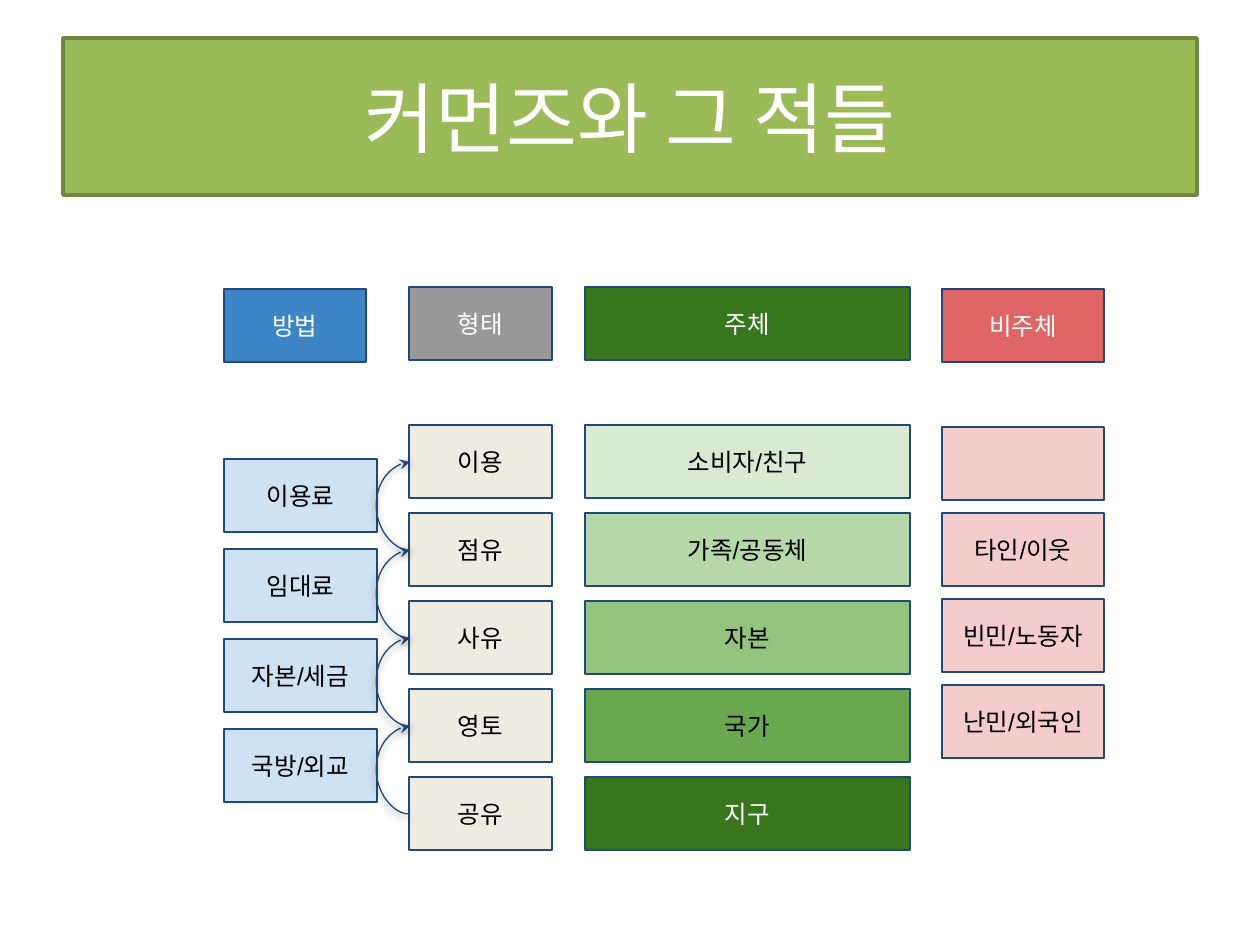
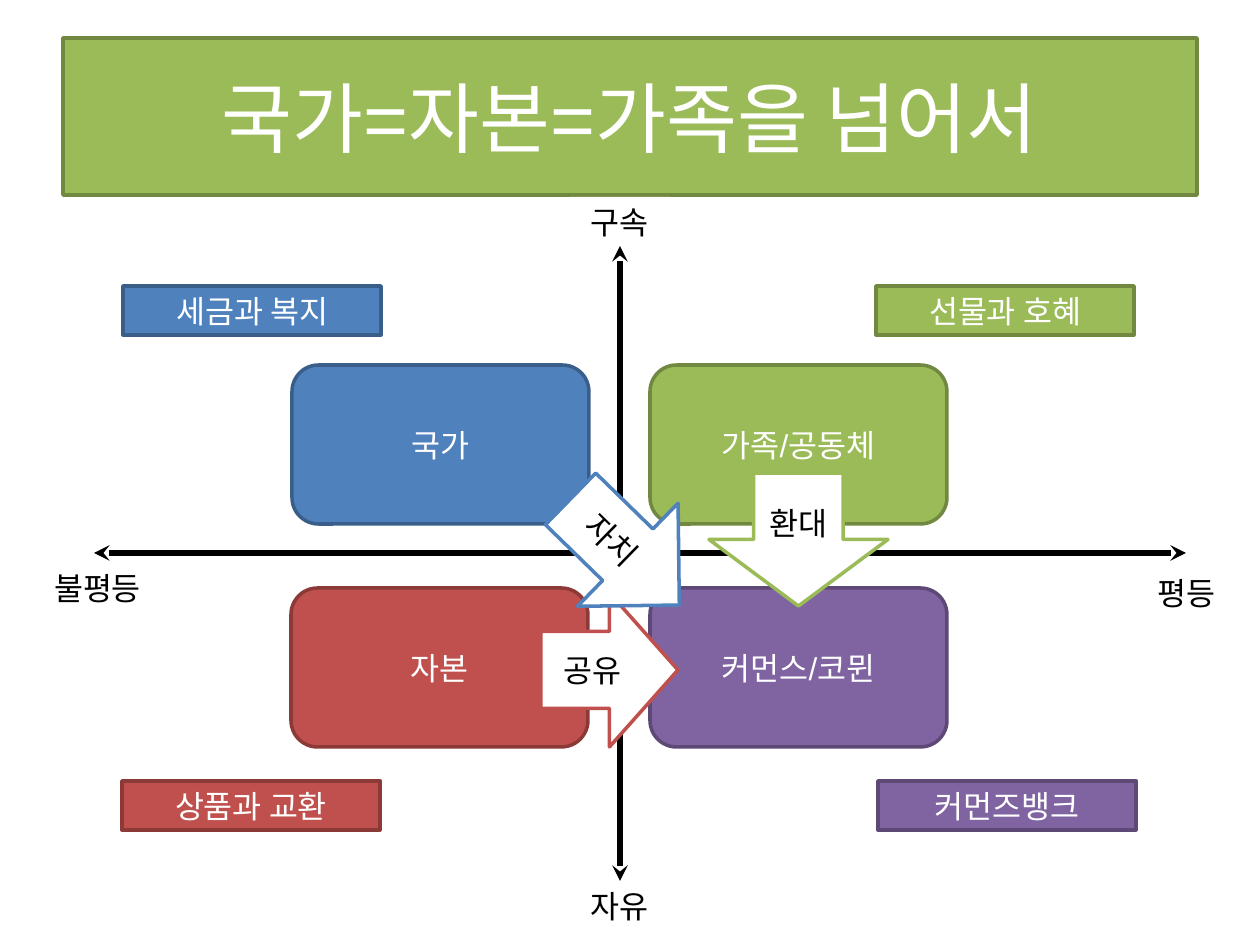
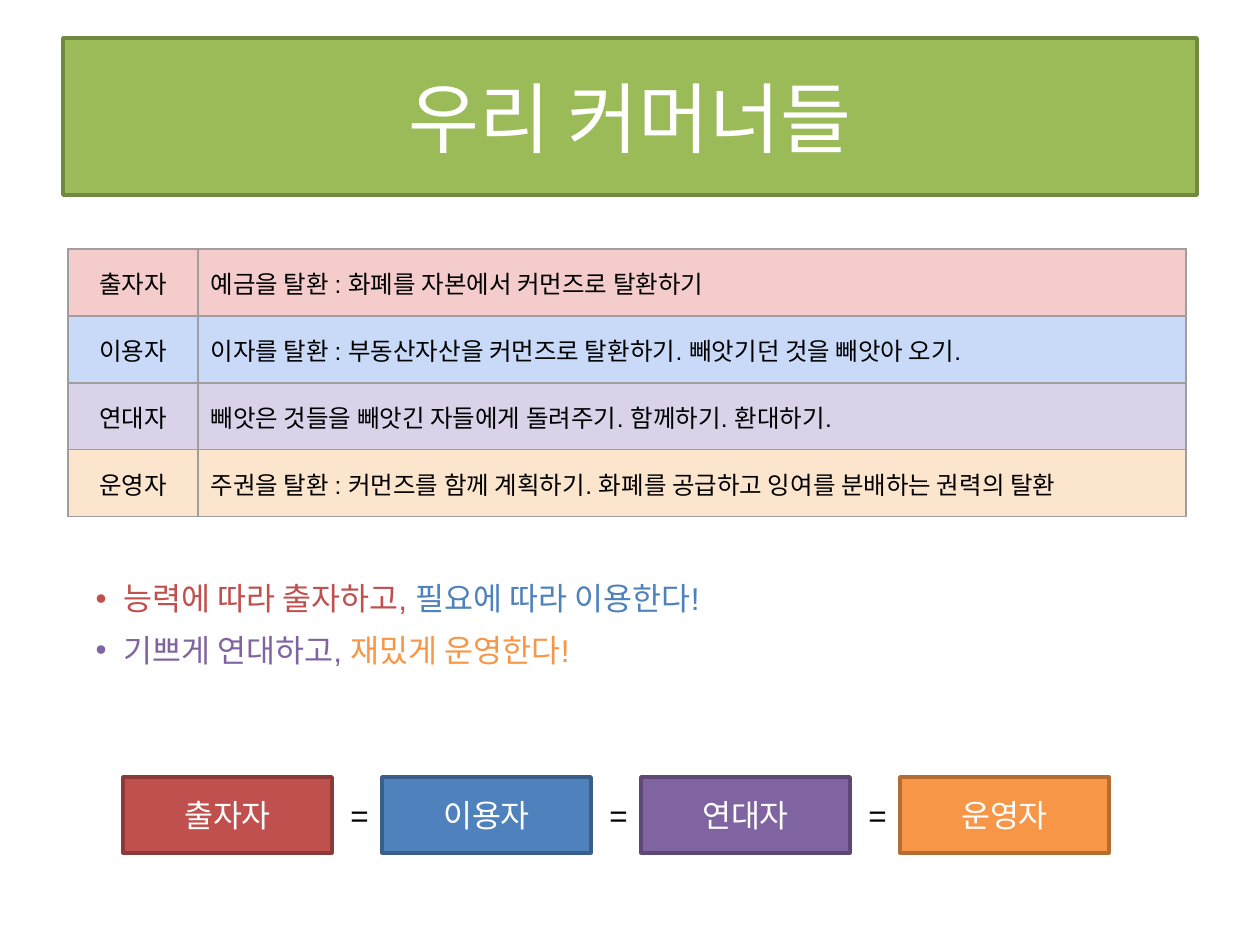
"""Builds three slides about the commons: forms of ownership, four quadrants, members."""
from lxml import etree
from pptx import Presentation
from pptx import util as u
from pptx.dml import color
from pptx.enum import shapes, text
from pptx.oxml import ns

PX = u.Inches(1) / 126
SHAPE = shapes.MSO_SHAPE
C = {
    "white": "FFFFFF", "black": "000000", "navy": "1F497D", "grid": "9E9E9E",
    "green": "9BBB59", "green_edge": "718840", "blue": "4F81BD", "blue_edge": "395E89",
    "red": "C0504D", "red_edge": "8C3A38", "purple": "8064A2", "purple_edge": "5D4876",
    "orange": "F79646", "orange_edge": "B46D33",
    "method": "3D85C6", "form": "999999", "subject": "38761D", "outsider": "E06666",
    "sky": "CFE2F3", "cream": "EEECE1", "pink": "F4CCCC",
    "leaf1": "D9EAD3", "leaf2": "B6D7A8", "leaf3": "93C47D", "leaf4": "6AA84F",
    "pale_blue": "C9DAF8", "pale_purple": "D9D2E9", "pale_orange": "FCE5CD",
}
RGB = {name: color.RGBColor.from_string(value) for name, value in C.items()}
TITLE_AT = (63, 38, 1134, 157)


def style(sp, at, words="", fill="white", edge=None, ink="white", size=18, weight=2):
    """Place a shape, paint it and write its centred text."""
    for name, px in zip(("left", "top", "width", "height"), at):
        setattr(sp, name, u.Emu(round(px * PX)))
    sp.shadow.inherit = False
    sp.fill.solid()
    sp.fill.fore_color.rgb = RGB[fill]
    if edge:
        sp.line.color.rgb = RGB[edge]
        sp.line.width = u.Pt(weight)
    else:
        sp.line.fill.background()
    if words:
        tf = sp.text_frame
        tf.word_wrap = True
        tf.vertical_anchor = text.MSO_ANCHOR.MIDDLE
        p = tf.paragraphs[0]
        p.alignment = text.PP_ALIGN.CENTER
        write(p, words, ink, size)
    return sp


def write(p, words, ink, size):
    """Add one run in the deck's font."""
    r = p.add_run()
    r.text = words
    for name, value in {"name": "Arial", "size": u.Pt(size)}.items():
        setattr(r.font, name, value)
    r.font.color.rgb = RGB[ink]


prs = Presentation()
prs.slide_width, prs.slide_height = u.Inches(10), u.Inches(7.5)
slides = []
for layout, title in ((5, "커먼즈와 그 적들"), (5, "국가=자본=가족을 넘어서"), (1, "우리 커머너들")):
    s = prs.slides.add_slide(prs.slide_layouts[layout])
    style(s.shapes.title, TITLE_AT, title, "green", "green_edge", size=44)
    slides.append(s)
ownership, quadrants, members = slides

columns = [
    (224, 142, 289, "방법", "method", 153, 459, 90,
     [("이용료", "sky"), ("임대료", "sky"), ("자본/세금", "sky"), ("국방/외교", "sky")]),
    (409, 143, 287, "형태", "form", 143, 425, 88,
     [("이용", "cream"), ("점유", "cream"), ("사유", "cream"), ("영토", "cream"), ("공유", "cream")]),
    (585, 325, 287, "주체", "subject", 325, 425, 88,
     [("소비자/친구", "leaf1"), ("가족/공동체", "leaf2"), ("자본", "leaf3"), ("국가", "leaf4"),
      ("지구", "subject")]),
    (942, 162, 289, "비주체", "outsider", 162, 427, 86,
     [("", "pink"), ("타인/이웃", "pink"), ("빈민/노동자", "pink"), ("난민/외국인", "pink")]),
]
for left, head_width, head_top, head, head_fill, width, top, step, rows in columns:
    cells = [((left, head_top, head_width, 73), head, head_fill)]
    cells += [((left, top + i * step, width, 73), words, fill) for i, (words, fill) in enumerate(rows)]
    for at, words, fill in cells:
        ink = "white" if fill in ("subject", head_fill) else "black"
        sp = ownership.shapes.add_shape(SHAPE.RECTANGLE, 0, 0, 0, 0)
        style(sp, at, words, fill, "navy", ink, 14, 0.75)

links = []
for i in range(4, 0, -1):
    start, end = (round((462 + 88 * row) * PX) for row in (i, i - 1))
    cxn = ownership.shapes.add_connector(
        shapes.MSO_CONNECTOR.CURVE, round(409 * PX), start, round(410 * PX), end)
    guides = cxn.element.spPr.find(ns.qn("a:prstGeom")).get_or_add_avLst()
    etree.SubElement(guides, ns.qn("a:gd"), name="adj1", fmla="val -3300000")
    links.append((cxn, "navy", 0.75, ("a:tailEnd",)))

for at, words, tone in (
    ((123, 286, 258, 49), "세금과 복지", "blue"),
    ((876, 286, 258, 49), "선물과 호혜", "green"),
    ((122, 781, 258, 49), "상품과 교환", "red"),
    ((878, 781, 258, 49), "커먼즈뱅크", "purple"),
):
    sp = quadrants.shapes.add_shape(SHAPE.RECTANGLE, 0, 0, 0, 0)
    style(sp, at, words, tone, tone + "_edge")

poles = []
for at, words in (
    ((570, 197, 100, 49), "구속"),
    ((570, 881, 100, 49), "자유"),
    ((23, 563, 149, 49), "불평등"),
    ((1134, 568, 105, 49), "평등"),
):
    sp = quadrants.shapes.add_shape(SHAPE.RECTANGLE, 0, 0, 0, 0)
    poles.append(style(sp, at, words, ink="black"))

axes = []
for ends in ((620, 246, 620, 881), (1186, 553, 94, 553)):
    cxn = quadrants.shapes.add_connector(
        shapes.MSO_CONNECTOR.STRAIGHT, *(round(px * PX) for px in ends))
    axes.append(cxn)
    links.append((cxn, "black", 3, ("a:headEnd", "a:tailEnd")))
axes[0].begin_connect(poles[0], 2)
axes[0].end_connect(poles[1], 0)

for cxn, ink, weight, heads in links:
    cxn.line.color.rgb = RGB[ink]
    cxn.line.width = u.Pt(weight)
    spPr = cxn.element.spPr
    for tag in heads:
        etree.SubElement(spPr.find(ns.qn("a:ln")), ns.qn(tag), type="stealth")
    effects = etree.SubElement(spPr, ns.qn("a:effectLst"))
    if ink == "navy":
        shadow = etree.SubElement(effects, ns.qn("a:outerShdw"), blurRad=str(u.Pt(4.5)),
                                  dist=str(u.Pt(1.5)), dir="5400000", rotWithShape="0")
        tint = etree.SubElement(shadow, ns.qn("a:srgbClr"), val=C["black"])
        etree.SubElement(tint, ns.qn("a:alpha"), val="50000")

for at, words, tone in (
    ((292, 365, 297, 159), "국가", "blue"),
    ((291, 588, 297, 159), "자본", "red"),
    ((650, 588, 297, 159), "커먼스/코뮌", "purple"),
    ((650, 365, 297, 159), "가족/공동체", "green"),
):
    sp = quadrants.shapes.add_shape(SHAPE.ROUNDED_RECTANGLE, 0, 0, 0, 0)
    style(sp, at, words, tone, tone + "_edge")

for geom, at, words, edge, turn in (
    (SHAPE.RIGHT_ARROW, (541, 593, 137, 154), "공유", "red", 0),
    (SHAPE.DOWN_ARROW, (709, 473, 179, 133), "환대", "green", 0),
    (SHAPE.RIGHT_ARROW, (549, 480, 152, 144), "자치", "blue", 44.3),
):
    sp = quadrants.shapes.add_shape(geom, 0, 0, 0, 0)
    style(sp, at, words, "white", edge, "black").rotation = turn

roles = [
    ("출자자", "pink", "red", "예금을 탈환 : 화폐를 자본에서 커먼즈로 탈환하기"),
    ("이용자", "pale_blue", "blue",
     "이자를 탈환 : 부동산자산을 커먼즈로 탈환하기. 빼앗기던 것을 빼앗아 오기."),
    ("연대자", "pale_purple", "purple",
     "빼앗은 것들을 빼앗긴 자들에게 돌려주기. 함께하기. 환대하기."),
    ("운영자", "pale_orange", "orange",
     "주권을 탈환 : 커먼즈를 함께 계획하기. 화폐를 공급하고 잉여를 분배하는 권력의 탈환"),
]
tbl = members.shapes.add_table(
    len(roles), 2, *(round(px * PX) for px in (68, 249, 1118, 268))).table
tbl.first_row = tbl.horz_banding = False
for col, px in zip(tbl.columns, (130, 988)):
    col.width = round(px * PX)
CELL = {"vertical_anchor": text.MSO_ANCHOR.MIDDLE}
CELL.update({"margin_" + side: u.Inches(0.1) for side in ("left", "right", "top", "bottom")})
for i, (role, fill, tone, task) in enumerate(roles):
    for j, (words, align) in enumerate(((role, text.PP_ALIGN.CENTER), (task, text.PP_ALIGN.LEFT))):
        cell = tbl.cell(i, j)
        for name, value in CELL.items():
            setattr(cell, name, value)
        cell.fill.solid()
        cell.fill.fore_color.rgb = RGB[fill]
        p = cell.text_frame.paragraphs[0]
        p.alignment = align
        write(p, words, "black", 14)
        tcPr = cell._tc.get_or_add_tcPr()
        for k, tag in enumerate(("a:lnL", "a:lnR", "a:lnT", "a:lnB")):
            ln = etree.Element(ns.qn(tag), w=str(u.Pt(0.75)))
            paint = etree.SubElement(ln, ns.qn("a:solidFill"))
            etree.SubElement(paint, ns.qn("a:srgbClr"), val=C["grid"])
            tcPr.insert(k, ln)

    sp = members.shapes.add_shape(SHAPE.RECTANGLE, 0, 0, 0, 0)
    style(sp, (123 + 259 * i, 777, 209, 76), role, tone, tone + "_edge")
    if i:
        sp = members.shapes.add_shape(SHAPE.RECTANGLE, 0, 0, 0, 0)
        style(sp, (79 + 259 * i, 790, 34, 49), "=", ink="black")

body = members.placeholders[1]
for name, px in zip(("left", "top", "width", "height"), (63, 573, 1134, 100)):
    setattr(body, name, round(px * PX))
tf = body.text_frame
slogans = [
    (("능력에 따라 출자하고, ", "red"), ("필요에 따라 이용한다!", "blue")),
    (("기쁘게 연대하고, ", "purple"), ("재밌게 운영한다!", "orange")),
]
for i, parts in enumerate(slogans):
    p = tf.add_paragraph() if i else tf.paragraphs[0]
    p.space_before = u.Pt(8 * i)
    for words, ink in parts:
        write(p, words, ink, 18)
    pPr = p._p.get_or_add_pPr()
    pPr.set("marL", str(u.Inches(0.38)))
    pPr.set("indent", str(u.Inches(-0.22)))
    bullet = etree.SubElement(pPr, ns.qn("a:buClr"))
    etree.SubElement(bullet, ns.qn("a:srgbClr"), val=C[parts[0][1]])
    etree.SubElement(pPr, ns.qn("a:buChar"), char="•")

prs.save("out.pptx")
